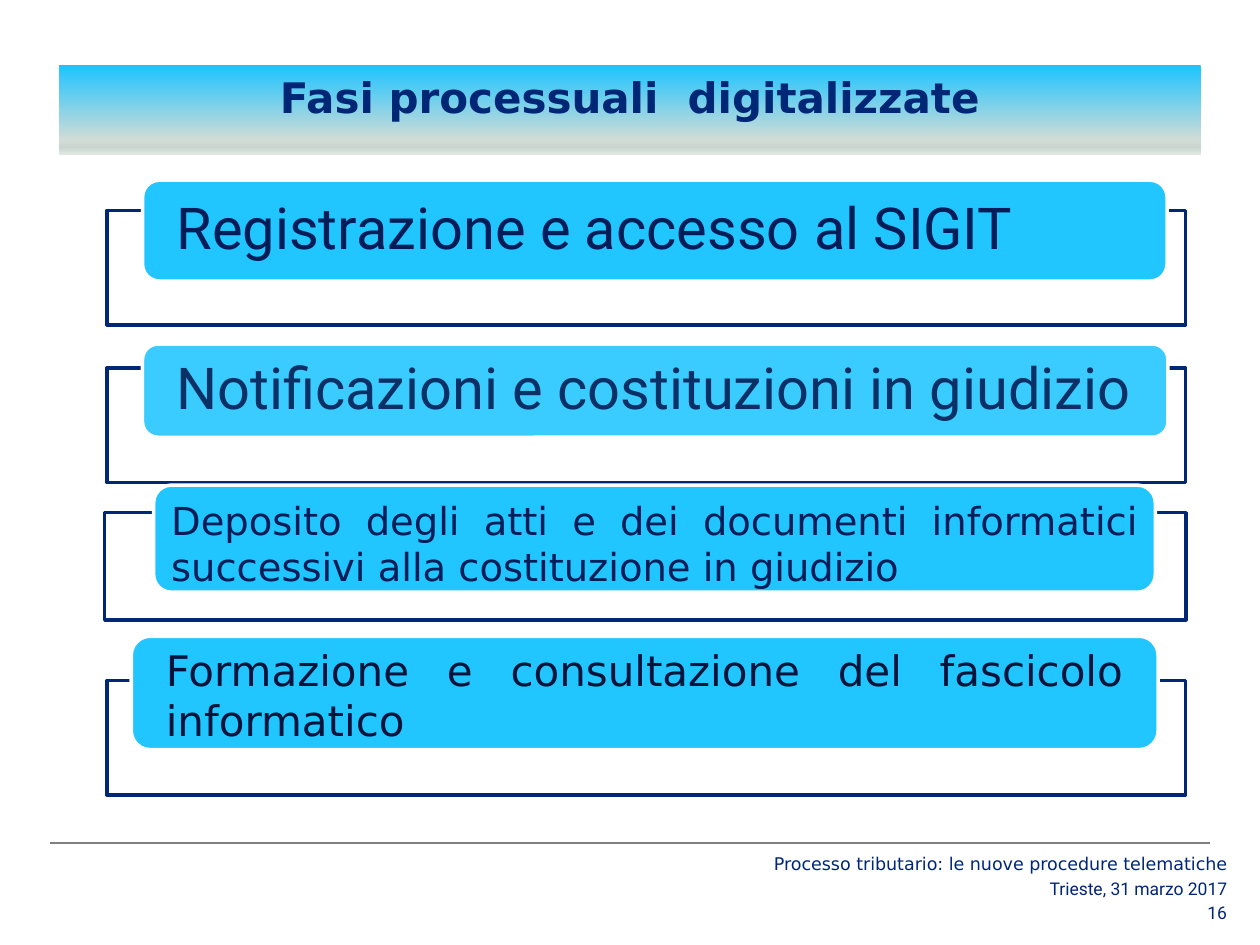
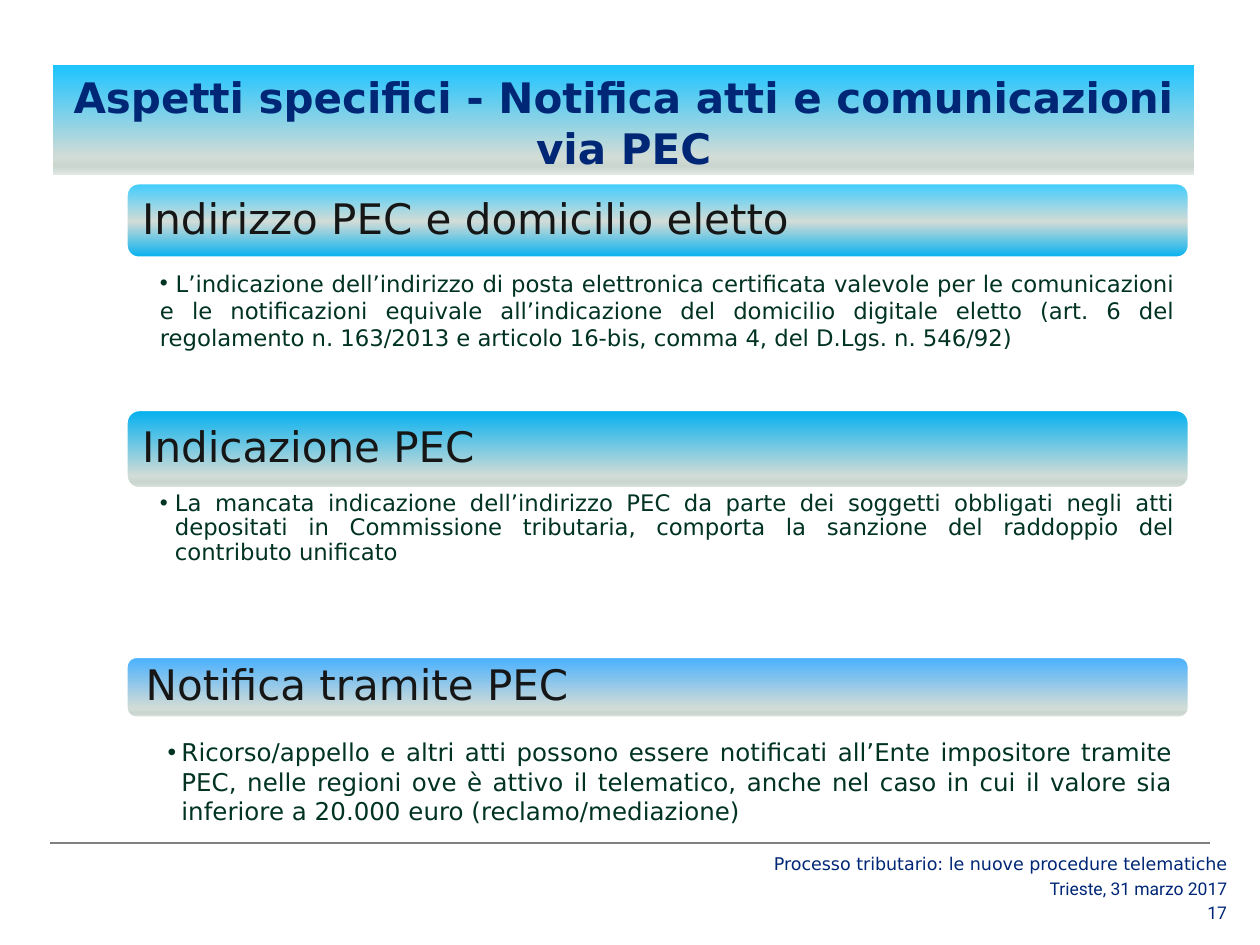
from lxml.etree import SubElement
from pptx import Presentation
from pptx.dml.color import RGBColor
from pptx.enum.shapes import MSO_CONNECTOR, MSO_SHAPE
from pptx.enum.text import MSO_ANCHOR, MSO_AUTO_SIZE, PP_ALIGN
from pptx.oxml.ns import qn
from pptx.util import Pt

SANS, ROBOTO = "DejaVu Sans", "Roboto"
NAVY, WHITE, GREY = "002776", "FFFFFF", "808080"
HEADING_INK, BODY_INK = "161616", "003322"
FADE = [(84, "D2DCD6"), (92, "C9D5CE"), (100, "E2E8E4")]
BAND_STOPS = [(0, "1DC4FF")] + FADE
LEFT, CENTER, JUSTIFY = PP_ALIGN.LEFT, PP_ALIGN.CENTER, PP_ALIGN.JUSTIFY
TOP, MIDDLE = MSO_ANCHOR.TOP, MSO_ANCHOR.MIDDLE
TITLE_ONLY, COMPARISON = 5, 4

FOOTERS = [
    ("Processo tributario: le nuove procedure telematiche", SANS, 493.2),
    ("Trieste, 31 marzo 2017", ROBOTO, 507.6),
]
NUMBER_CENTER = 521.3
FOOTER_RIGHT, FOOTER_WIDTH, FOOTER_HEIGHT = 708.3, 280, 12

PHASES_TITLE = ("Fasi processuali  digitalizzate", (33.8, 37.4, 652.3, 51.1))
PHASES = [
    dict(text="Registrazione e accesso al SIGIT",
         frame=(61.2, 120.2, 616.3, 65.5), label=(81.5, 103, 585.4, 57.6),
         fill="21C5FF", ink="001D58", font=ROBOTO, size=33, align=LEFT,
         anchor=MIDDLE, insets=(16.6, 0, 8, 0), spacing=0.9),
    dict(text="Notificazioni e costituzioni in giudizio",
         frame=(61.2, 210.2, 616.3, 65.5), label=(81.4, 196.6, 586, 53.3),
         fill="3BCCFF", ink="0B3066", font=ROBOTO, size=33, align=LEFT,
         anchor=MIDDLE, insets=(16.6, 0, 8, 0), spacing=0.9),
    dict(text="Deposito degli atti e dei documenti informatici successivi alla costituzione in giudizio",
         frame=(59.8, 293, 617.8, 61.2), label=(87.8, 277.2, 572.4, 61.2),
         fill="21C5FF", ink="001D58", font=SANS, size=22, align=JUSTIFY,
         anchor=TOP, insets=(7.2, 3.6, 7.2, 3.6), spacing=1),
    dict(text="Formazione e consultazione del fascicolo informatico",
         frame=(61.2, 388.8, 616.3, 65.5), label=(75, 363.6, 586.8, 64.8),
         fill="21C5FF", ink="00143B", font=SANS, size=24, align=JUSTIFY,
         anchor=MIDDLE, insets=(16.6, 2, 16.6, 0), spacing=1),
]

PEC_TITLE = ("Aspetti specifici - Notifica atti e comunicazioni via PEC", (30.2, 37.4, 652.3, 62.6))
SECTION_LEFT, SECTION_WIDTH = 72, 607.7
SECTIONS = [
    dict(heading="Indirizzo PEC e domicilio eletto", top=104.4, height=43.2, inset=7.2,
         stops=[(0, "3BCCFF"), (51, "D2DCD6"), (100, "00B0F0")],
         text=" L’indicazione dell’indirizzo di posta elettronica certificata valevole per le comunicazioni e le notificazioni equivale all’indicazione del domicilio digitale eletto (art. 6 del regolamento n. 163/2013 e articolo 16-bis, comma 4, del D.Lgs. n. 546/92)",
         body=(72, 152.6, 607.7, 80.6), insets=(19.4, 1.4, 9.4, 1.4),
         size=13, margin=0, hanging=0, spacing=1),
    dict(heading="Indicazione PEC", top=234, height=45.4, inset=7.2,
         stops=[(0, "00B0F0")] + FADE,
         text="La mancata indicazione dell’indirizzo PEC da parte dei soggetti obbligati negli atti depositati in Commissione tributaria, comporta la sanzione del raddoppio del contributo unificato",
         body=(72, 279.4, 607.7, 90), insets=(19.4, 1.4, 9.4, 1.4),
         size=13, margin=8.6, hanging=8.6, spacing=0.9),
    dict(heading="Notifica tramite PEC", top=375.1, height=35.3, inset=9.6,
         stops=[(0, "47B0FF")] + FADE,
         text="Ricorso/appello e altri atti possono essere notificati all’Ente impositore tramite PEC, nelle regioni ove è attivo il telematico, anche nel caso in cui il valore sia inferiore a 20.000 euro (reclamo/mediazione)",
         body=(82.1, 417.6, 595.4, 56.9), insets=(7.2, 3.6, 7.2, 3.6),
         size=14, margin=14.4, hanging=7.9, spacing=1),
]


def color(value):
    return RGBColor.from_string(value)


def place(shape, box):
    shape.left, shape.top, shape.width, shape.height = map(Pt, box)


def paint_gradient(shape, stops):
    shape.fill.gradient()
    shape.fill.gradient_angle = 270
    stop_list = shape.element.spPr.find(qn("a:gradFill")).find(qn("a:gsLst"))
    for stop in list(stop_list):
        stop_list.remove(stop)
    for position, value in stops:
        stop = SubElement(stop_list, qn("a:gs"), pos=str(position * 1000))
        SubElement(stop, qn("a:srgbClr"), val=value)


def write(shape, text, font, size, ink, align=LEFT, anchor=MIDDLE,
          insets=(7.2, 3.6, 7.2, 3.6), spacing=1, bold=False, bullet=None):
    frame = shape.text_frame
    frame.word_wrap = True
    frame.auto_size = MSO_AUTO_SIZE.NONE
    frame.vertical_anchor = anchor
    frame.margin_left, frame.margin_top, frame.margin_right, frame.margin_bottom = map(Pt, insets)
    frame.text = text
    paragraph = frame.paragraphs[0]
    if bullet:
        margin, hanging = bullet
        properties = paragraph._p.get_or_add_pPr()
        properties.set("marL", str(int(Pt(margin))))
        properties.set("indent", str(-int(Pt(hanging))))
        SubElement(properties, qn("a:buChar"), char="•")
    paragraph.alignment = align
    paragraph.line_spacing = spacing
    paragraph.space_before = Pt(0)
    paragraph.font.name = font
    paragraph.font.size = Pt(size)
    paragraph.font.bold = bold
    paragraph.font.color.rgb = color(ink)


def add_block(page, kind, box, line, fill=None, stops=None):
    shape = page.shapes.add_shape(kind, *map(Pt, box))
    shape.shadow.inherit = False
    if stops:
        paint_gradient(shape, stops)
    else:
        shape.fill.solid()
        shape.fill.fore_color.rgb = color(fill)
    shape.line.color.rgb = color(line)
    shape.line.width = Pt(2)
    return shape


def add_page(deck, layout, title, number):
    page = deck.slides.add_slide(deck.slide_layouts[layout])
    text, box = title
    band = page.shapes.title
    place(band, box)
    paint_gradient(band, BAND_STOPS)
    write(band, text, SANS, 24, NAVY, CENTER, TOP, bold=True)
    rule = page.shapes.add_connector(MSO_CONNECTOR.STRAIGHT, Pt(28.4), Pt(481.7), Pt(691.6), Pt(481.7))
    rule.line.color.rgb = color(GREY)
    rule.line.width = Pt(0.75)
    SubElement(rule.element.spPr, qn("a:effectLst"))
    for words, font, center in FOOTERS + [(str(number), ROBOTO, NUMBER_CENTER)]:
        footer = page.shapes.add_textbox(
            Pt(FOOTER_RIGHT - FOOTER_WIDTH), Pt(center - FOOTER_HEIGHT / 2),
            Pt(FOOTER_WIDTH), Pt(FOOTER_HEIGHT))
        write(footer, words, font, 10, NAVY, PP_ALIGN.RIGHT, insets=(7.2, 0, 7.2, 0))
    return page


def build_phases(deck):
    page = add_page(deck, TITLE_ONLY, PHASES_TITLE, 16)
    for phase in PHASES:
        add_block(page, MSO_SHAPE.RECTANGLE, phase["frame"], NAVY, WHITE)
        label = add_block(page, MSO_SHAPE.ROUNDED_RECTANGLE, phase["label"], WHITE, phase["fill"])
        write(label, phase["text"], phase["font"], phase["size"], phase["ink"],
              phase["align"], phase["anchor"], phase["insets"], phase["spacing"])


def build_pec(deck):
    page = add_page(deck, COMPARISON, PEC_TITLE, 17)
    bodies = [holder for holder in page.placeholders if holder.placeholder_format.idx in range(1, 5)]
    for section, body in zip(SECTIONS, bodies):
        box = (SECTION_LEFT, section["top"], SECTION_WIDTH, section["height"])
        heading = add_block(page, MSO_SHAPE.ROUNDED_RECTANGLE, box, WHITE, stops=section["stops"])
        write(heading, section["heading"], SANS, 24, HEADING_INK,
              insets=(section["inset"], 0, 7.2, 0), spacing=0.9)
        place(body, section["body"])
        write(body, section["text"], SANS, section["size"], BODY_INK, JUSTIFY, TOP,
              section["insets"], section["spacing"], bullet=(section["margin"], section["hanging"]))
    for spare in bodies[len(SECTIONS):]:
        spare.element.getparent().remove(spare.element)


def main():
    deck = Presentation()
    deck.slide_width, deck.slide_height = Pt(720), Pt(540)
    build_phases(deck)
    build_pec(deck)
    deck.save("out.pptx")


if __name__ == "__main__":
    main()
